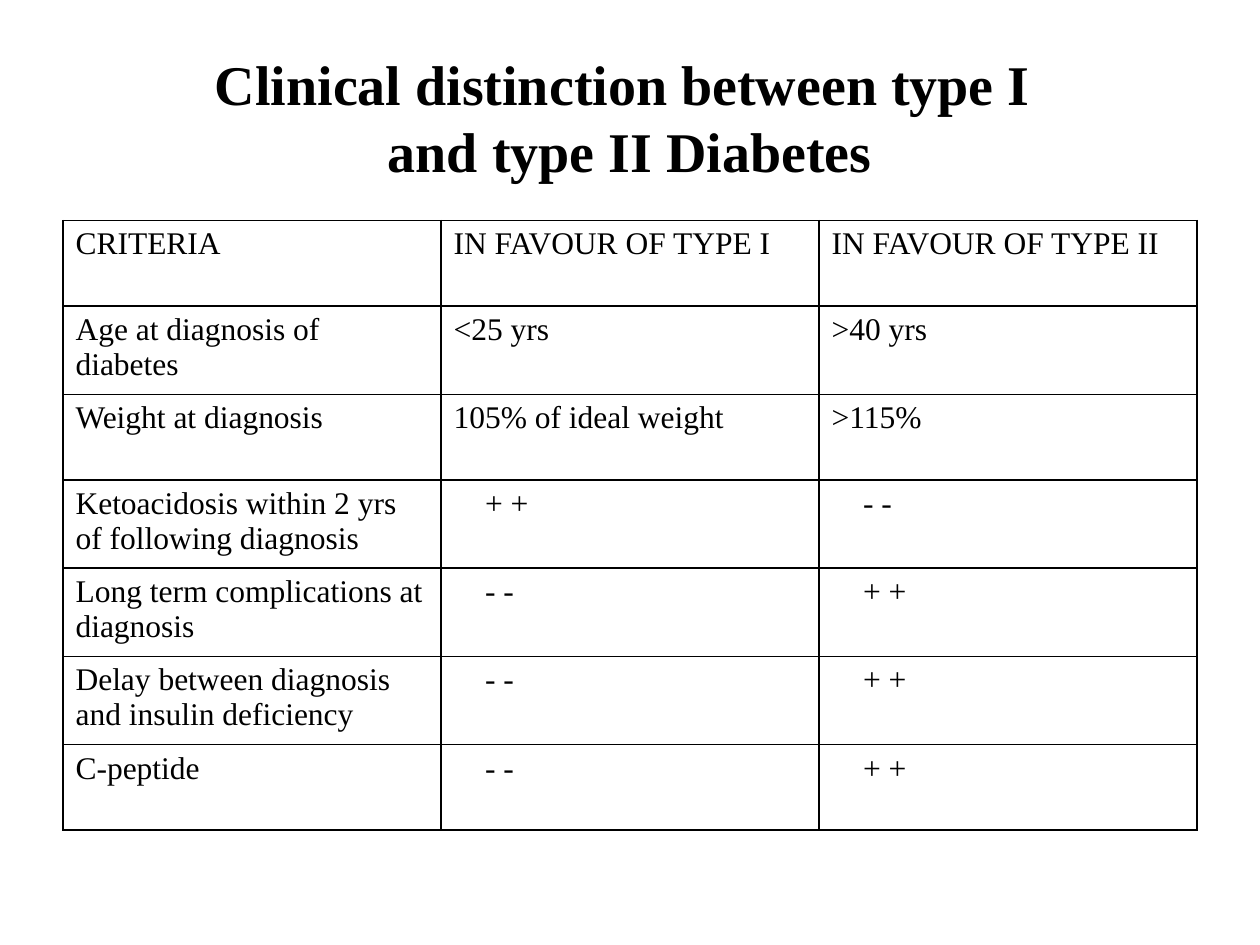
from typing import NamedTuple

from lxml import etree
from pptx import Presentation
from pptx.dml.color import RGBColor
from pptx.enum import text
from pptx.oxml import ns
from pptx.util import Pt

FONT = "Times New Roman"
BLACK = "000000"
WHITE = "FFFFFF"
LEFT, WIDTH = 36, 648
TABLE_TOP, ROW_HEIGHT = 126, 48.9
CELL_MARGIN, MARK_INDENT = 7.2, 18
BORDER_WIDTH = 1
YES, NO = "+ +", "- -"


class Criterion(NamedTuple):
    name: str
    type_one: str
    type_two: str


CRITERIA = [
    Criterion("CRITERIA", "IN FAVOUR OF TYPE I", "IN FAVOUR OF TYPE II"),
    Criterion("Age at diagnosis of diabetes", "<25 yrs", ">40 yrs"),
    Criterion("Weight at diagnosis", "105% of ideal weight", ">115%"),
    Criterion("Ketoacidosis within 2 yrs of following diagnosis", YES, NO),
    Criterion("Long term complications at diagnosis", NO, YES),
    Criterion("Delay between diagnosis and insulin deficiency", NO, YES),
    Criterion("C-peptide", NO, YES),
]


def color(value: str) -> RGBColor:
    return RGBColor.from_string(value)


def style_paragraph(paragraph, size: float, bold: bool = False) -> None:
    font = paragraph.font
    font.name, font.size, font.bold = FONT, Pt(size), bold
    font.color.rgb = color(BLACK)


def add_title(slide, title: str) -> None:
    shape = slide.shapes.add_textbox(Pt(LEFT), Pt(21.6), Pt(WIDTH), Pt(90))
    frame = shape.text_frame
    frame.word_wrap = True
    frame.vertical_anchor = text.MSO_ANCHOR.MIDDLE
    paragraph = frame.paragraphs[0]
    paragraph.text = title
    paragraph.alignment = text.PP_ALIGN.CENTER
    style_paragraph(paragraph, 32, bold=True)


def add_borders(cell) -> None:
    properties = cell._tc.get_or_add_tcPr()
    for side in ("L", "R", "T", "B"):
        line = etree.SubElement(properties, ns.qn(f"a:ln{side}"), w=str(Pt(BORDER_WIDTH)))
        fill = etree.SubElement(line, ns.qn("a:solidFill"))
        etree.SubElement(fill, ns.qn("a:srgbClr"), val=BLACK)


def fill_cell(cell, content: str) -> None:
    add_borders(cell)
    cell.fill.solid()
    cell.fill.fore_color.rgb = color(WHITE)
    indent = MARK_INDENT if content in (YES, NO) else 0
    cell.margin_left = Pt(CELL_MARGIN + indent)
    cell.text = content
    style_paragraph(cell.text_frame.paragraphs[0], 18)


def add_criteria_table(slide, criteria: list[Criterion]) -> None:
    table = slide.shapes.add_table(
        len(criteria), len(Criterion._fields),
        Pt(LEFT), Pt(TABLE_TOP), Pt(WIDTH), Pt(ROW_HEIGHT * len(criteria)),
    ).table
    table.first_row = table.horz_banding = False
    for row, criterion in zip(table.rows, criteria):
        row.height = Pt(ROW_HEIGHT)
        for cell, content in zip(row.cells, criterion):
            fill_cell(cell, content)


def main() -> None:
    presentation = Presentation()
    presentation.slide_width, presentation.slide_height = Pt(720), Pt(540)
    slide = presentation.slides.add_slide(presentation.slide_layouts[6])
    add_title(slide, "Clinical distinction between type I \vand type II Diabetes")
    add_criteria_table(slide, CRITERIA)
    presentation.save("out.pptx")


if __name__ == "__main__":
    main()
